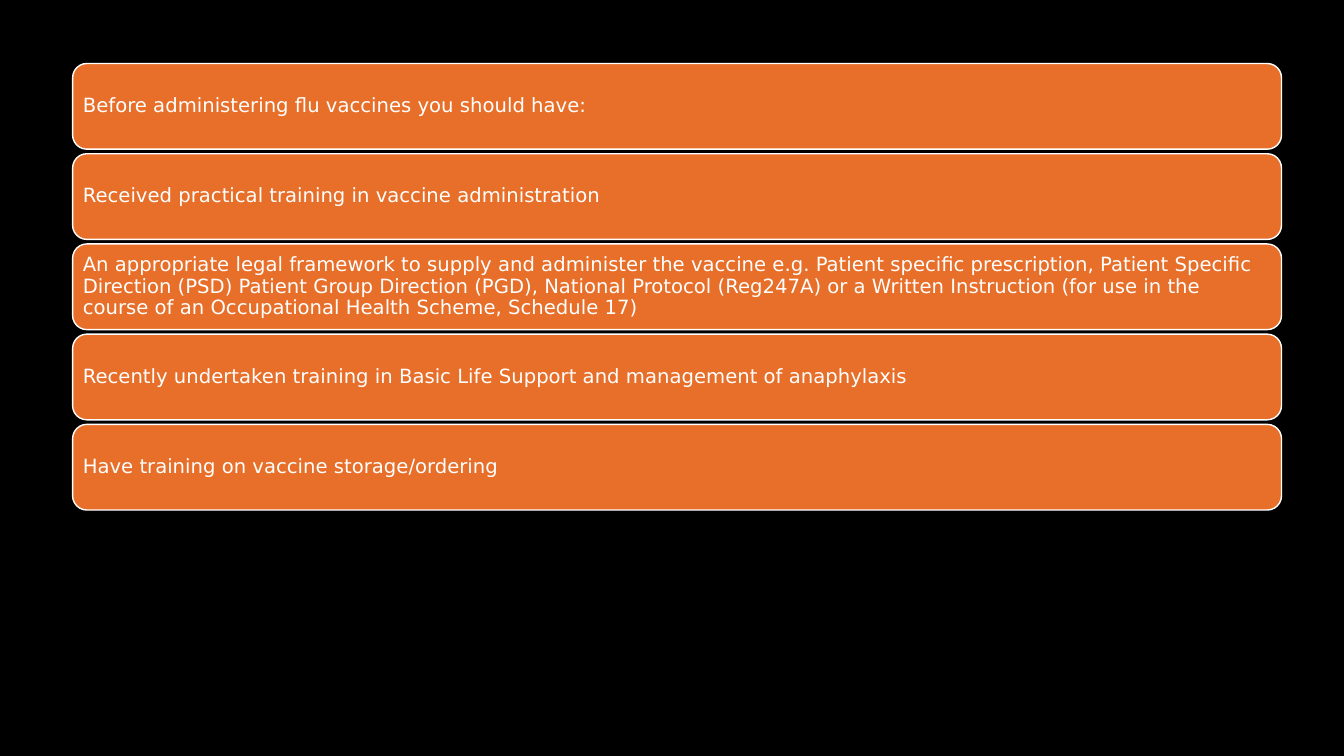
from dataclasses import dataclass

from pptx import Presentation
from pptx.dml.color import RGBColor
from pptx.enum.shapes import MSO_SHAPE
from pptx.enum.text import MSO_ANCHOR, PP_ALIGN
from pptx.util import Inches, Pt

ROUNDED = MSO_SHAPE.ROUNDED_RECTANGLE
MIDDLE = MSO_ANCHOR.MIDDLE
LEFT = PP_ALIGN.LEFT


@dataclass(frozen=True)
class Theme:
    background: RGBColor = RGBColor(0x00, 0x00, 0x00)
    bar: RGBColor = RGBColor(0xE7, 0x6F, 0x29)
    text: RGBColor = RGBColor(0xFF, 0xFF, 0xFF)
    font: str = "DejaVu Sans"
    size: Pt = Pt(14)
    outline: Pt = Pt(1)


THEME = Theme()

# Stack of bars, in inches
SLIDE_WIDTH, SLIDE_HEIGHT = 13.33, 7.5
STACK_LEFT, STACK_TOP = 0.72, 0.63
STACK_WIDTH, STACK_HEIGHT = 11.99, 4.43
BAR_HEIGHT = 0.85
BAR_INSET = 0.06

REQUIREMENTS = [
    "Before administering flu vaccines you should have:",
    "Received practical training in vaccine administration",
    "An appropriate legal framework to supply and administer the vaccine e.g. "
    "Patient specific prescription, Patient Specific Direction (PSD) Patient "
    "Group Direction (PGD), National Protocol (Reg247A) or a Written Instruction "
    "(for use in the course of an Occupational Health Scheme, Schedule 17)",
    "Recently undertaken training in Basic Life Support and management of anaphylaxis",
    "Have training on vaccine storage/ordering",
]


def paint_background(slide):
    fill = slide.background.fill
    fill.solid()
    fill.fore_color.rgb = THEME.background


def write_requirement(frame, requirement):
    frame.word_wrap = True
    frame.vertical_anchor = MIDDLE
    frame.margin_left = frame.margin_right = Inches(BAR_INSET)
    frame.margin_top = frame.margin_bottom = Inches(BAR_INSET)
    paragraph = frame.paragraphs[0]
    paragraph.alignment = LEFT
    paragraph.line_spacing = 0.9
    run = paragraph.add_run()
    run.text = requirement
    run.font.name = THEME.font
    run.font.size = THEME.size
    run.font.color.rgb = THEME.text


def add_bar(slide, top, requirement):
    bar = slide.shapes.add_shape(
        ROUNDED, Inches(STACK_LEFT), Inches(top), Inches(STACK_WIDTH), Inches(BAR_HEIGHT)
    )
    bar.shadow.inherit = False
    bar.fill.solid()
    bar.fill.fore_color.rgb = THEME.bar
    bar.line.color.rgb = THEME.text
    bar.line.width = THEME.outline
    write_requirement(bar.text_frame, requirement)


def main():
    deck = Presentation()
    deck.slide_width = Inches(SLIDE_WIDTH)
    deck.slide_height = Inches(SLIDE_HEIGHT)
    slide = deck.slides.add_slide(deck.slide_layouts[6])
    paint_background(slide)

    # Evenly spaced bars, one per requirement
    row_step = (STACK_HEIGHT - BAR_HEIGHT) / (len(REQUIREMENTS) - 1)
    for row, requirement in enumerate(REQUIREMENTS):
        add_bar(slide, STACK_TOP + row * row_step, requirement)

    deck.save("out.pptx")


if __name__ == "__main__":
    main()
